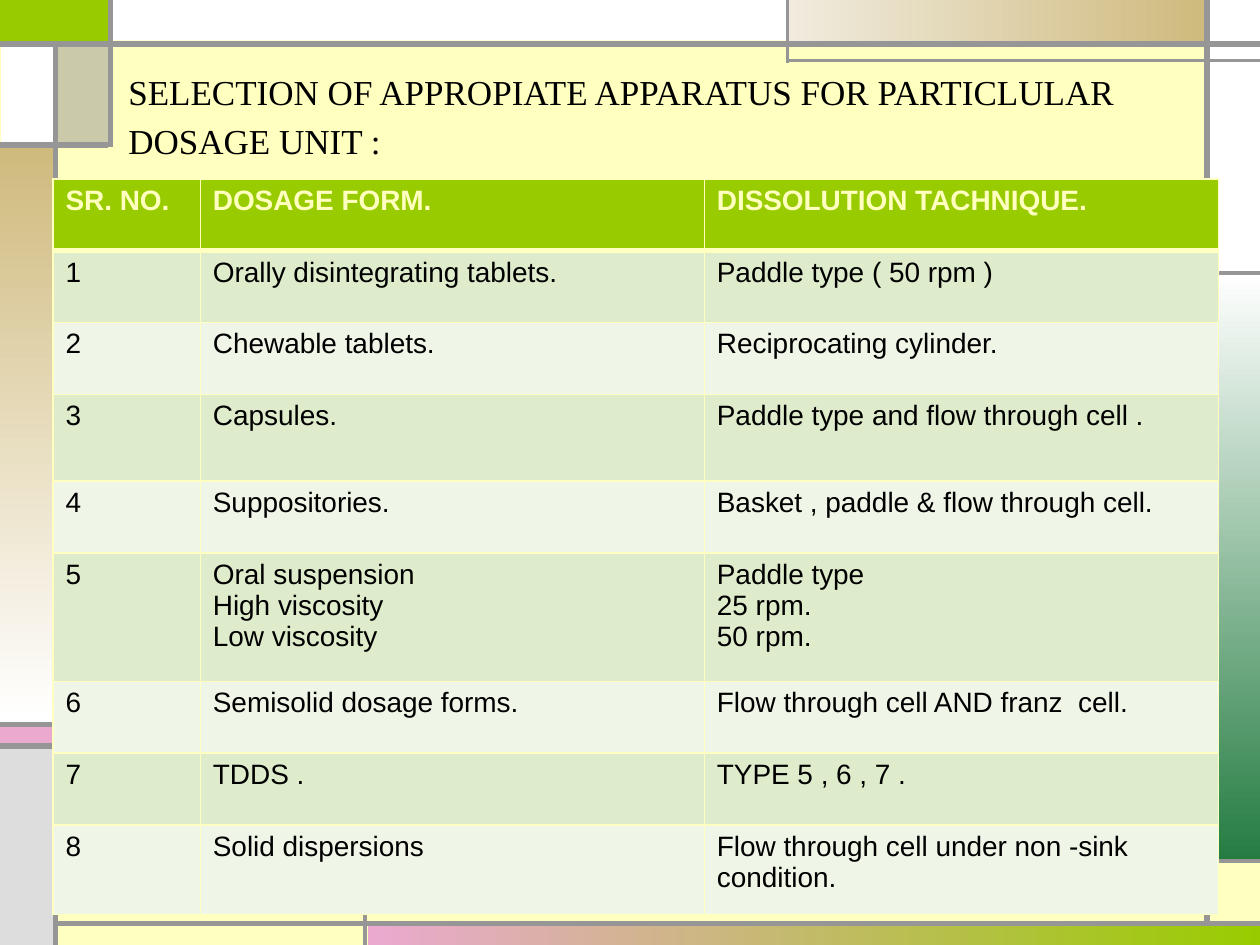
import pptx
import pptx.util
import pptx.dml.color
import pptx.enum.shapes
import pptx.enum.text
import pptx.oxml.ns
from lxml import etree

Inches, Pt = pptx.util.Inches, pptx.util.Pt
qn = pptx.oxml.ns.qn
GREY, CREAM, LIME = "969696", "FFFFBF", "99CC00"

# left, top, width, height, colour or (from, to, clockwise angle)
PANELS = [
    (0, 0, 0.87, 0.34, LIME),
    (2.92, 7.33, 7.08, 0.17, ("EBA9D0", LIME, 0)),
    (9.58, 2.17, 0.42, 4.67, ("FFFFFF", "247C41", 90)),
    (0, 5.75, 0.42, 0.17, "EBA9D0"),
    (0, 5.93, 0.42, 1.57, "DDDDDD"),
    (9.58, 0, 0.42, 2.17, "FFFFFF"),
    (6.25, 0, 3.33, 0.33, ("F0EBDE", "CFBA7D", 0)),
    (0.46, 0.33, 0.42, 0.82, GREY),
    (0, 1.15, 0.42, 4.58, ("CFBA7D", "FFFFFF", 90)),
    (0.01, 0.33, 0.42, 0.82, "FFFFFF"),
    (0.86, 0, 5.39, 0.32, "FFFFFF"),
]

# x1, y1, x2, y2, width
RULES = [
    (0.44, 7.5, 0.44, 0.33, 3),
    (0.44, 7.33, 10.01, 7.33, 3),
    (9.58, 7.33, 9.58, 0, 3),
    (0, 0.35, 10, 0.35, 3),
    (10, 0.48, 6.25, 0.48, 2.25),
    (6.25, 0.5, 6.25, 0, 2.25),
    (9.58, 2.17, 10, 2.17, 2.25),
    (0.88, 0, 0.88, 1.17, 3),
    (0.86, 1.15, 0, 1.15, 3),
    (2.9, 7.5, 2.9, 6.82, 2.25),
    (2.89, 6.83, 10, 6.83, 2.25),
    (0.46, 5.75, 0, 5.75, 3),
    (0.46, 5.92, 0, 5.92, 3),
]

TITLE = ["SELECTION OF APPROPIATE APPARATUS FOR PARTICLULAR", "DOSAGE UNIT :"]
COLS = [1.17, 4, 4.08]
ROWS = [0.57, 0.57, 0.57, 0.69, 0.57, 1.02, 0.57, 0.57, 0.71]
HEAD = ("SR. NO.", "DOSAGE FORM.", "DISSOLUTION TACHNIQUE.")
FORMS = [
    ("Orally disintegrating tablets.", "Paddle type ( 50 rpm )"),
    ("Chewable tablets.", "Reciprocating cylinder."),
    ("Capsules.", "Paddle type and flow through cell ."),
    ("Suppositories.", "Basket , paddle & flow through cell."),
    ("Oral suspension\nHigh viscosity\nLow viscosity",
     "Paddle type\n25 rpm.\n50 rpm."),
    ("Semisolid dosage forms.", "Flow through cell AND franz  cell."),
    ("TDDS .", "TYPE 5 , 6 , 7 ."),
    ("Solid dispersions", "Flow through cell under non -sink condition."),
]


def rgb(code):
    return pptx.dml.color.RGBColor.from_string(code)


def add_panel(slide, x, y, w, h, paint):
    box = slide.shapes.add_shape(pptx.enum.shapes.MSO_SHAPE.RECTANGLE,
                                 Inches(x), Inches(y), Inches(w), Inches(h))
    box.shadow.inherit = False
    box.line.fill.background()
    if isinstance(paint, str):
        box.fill.solid()
        box.fill.fore_color.rgb = rgb(paint)
    else:
        box.fill.gradient()
        box.fill.gradient_angle = (360 - paint[2]) % 360
        for stop, code in zip(box.fill.gradient_stops, paint):
            stop.color.rgb = rgb(code)
    return box


def fade(box, percent):
    color = box.fill._xPr.find(qn("a:solidFill"))[0]
    etree.SubElement(color, qn("a:alpha"), val=str(percent * 1000))


def add_rule(slide, x1, y1, x2, y2, width):
    rule = slide.shapes.add_connector(
        pptx.enum.shapes.MSO_CONNECTOR.STRAIGHT,
        Inches(x1), Inches(y1), Inches(x2), Inches(y2))
    rule.line.color.rgb = rgb(GREY)
    rule.line.width = Pt(width)
    etree.SubElement(rule._element.spPr, qn("a:effectLst"))


def write(frame, lines, font, size, color, bold=False, gap=0):
    for i, line in enumerate(lines):
        para = frame.paragraphs[0] if i == 0 else frame.add_paragraph()
        para.alignment = pptx.enum.text.PP_ALIGN.LEFT
        para.space_before = Pt(gap)
        run = para.add_run()
        run.text = line
        run.font.name, run.font.size, run.font.bold = font, Pt(size), bold
        run.font.color.rgb = rgb(color)


def add_title(slide):
    box = slide.shapes.add_textbox(Inches(0.92), Inches(0.5),
                                   Inches(8.37), Inches(0.83))
    frame = box.text_frame
    frame.word_wrap = True
    frame.vertical_anchor = pptx.enum.text.MSO_ANCHOR.BOTTOM
    write(frame, TITLE, "Times New Roman", 20, "000000", gap=4)


def set_edges(cell, base):
    props = cell._tc.get_or_add_tcPr()
    # Border lines must come before the fill
    for i, (side, width) in enumerate(zip("LRTB", (1, 1, 1, base))):
        edge = etree.Element(qn("a:ln" + side), w=str(Pt(width)))
        fill = etree.SubElement(edge, qn("a:solidFill"))
        etree.SubElement(fill, qn("a:srgbClr"), val=CREAM)
        props.insert(i, edge)


def add_grid(slide):
    grid = slide.shapes.add_table(len(ROWS), len(COLS), Inches(0.42),
                                  Inches(1.42), Inches(sum(COLS)),
                                  Inches(sum(ROWS))).table
    for col, width in zip(grid.columns, COLS):
        col.width = Inches(width)
    data = [HEAD] + [(str(n), *form) for n, form in enumerate(FORMS, 1)]
    for r, texts in enumerate(data):
        grid.rows[r].height = Inches(ROWS[r])
        head = r == 0
        back = LIME if head else ("EFF6E7", "DEECCC")[r % 2]
        for c, text in enumerate(texts):
            cell = grid.cell(r, c)
            cell.fill.solid()
            cell.fill.fore_color.rgb = rgb(back)
            set_edges(cell, 3 if head else 1)
            write(cell.text_frame, text.split("\n"), "Arial", 16,
                  CREAM if head else "000000", bold=head)


def main():
    deck = pptx.Presentation()
    deck.slide_width, deck.slide_height = Inches(10), Inches(7.5)
    slide = deck.slides.add_slide(deck.slide_layouts[6])
    slide.background.fill.solid()
    slide.background.fill.fore_color.rgb = rgb(CREAM)

    # Frame of panels and rules
    for panel in PANELS:
        box = add_panel(slide, *panel)
        if panel[4] == GREY:
            fade(box, 50)
    for rule in RULES:
        add_rule(slide, *rule)

    # Content
    add_title(slide)
    add_grid(slide)
    deck.save("out.pptx")


if __name__ == "__main__":
    main()
